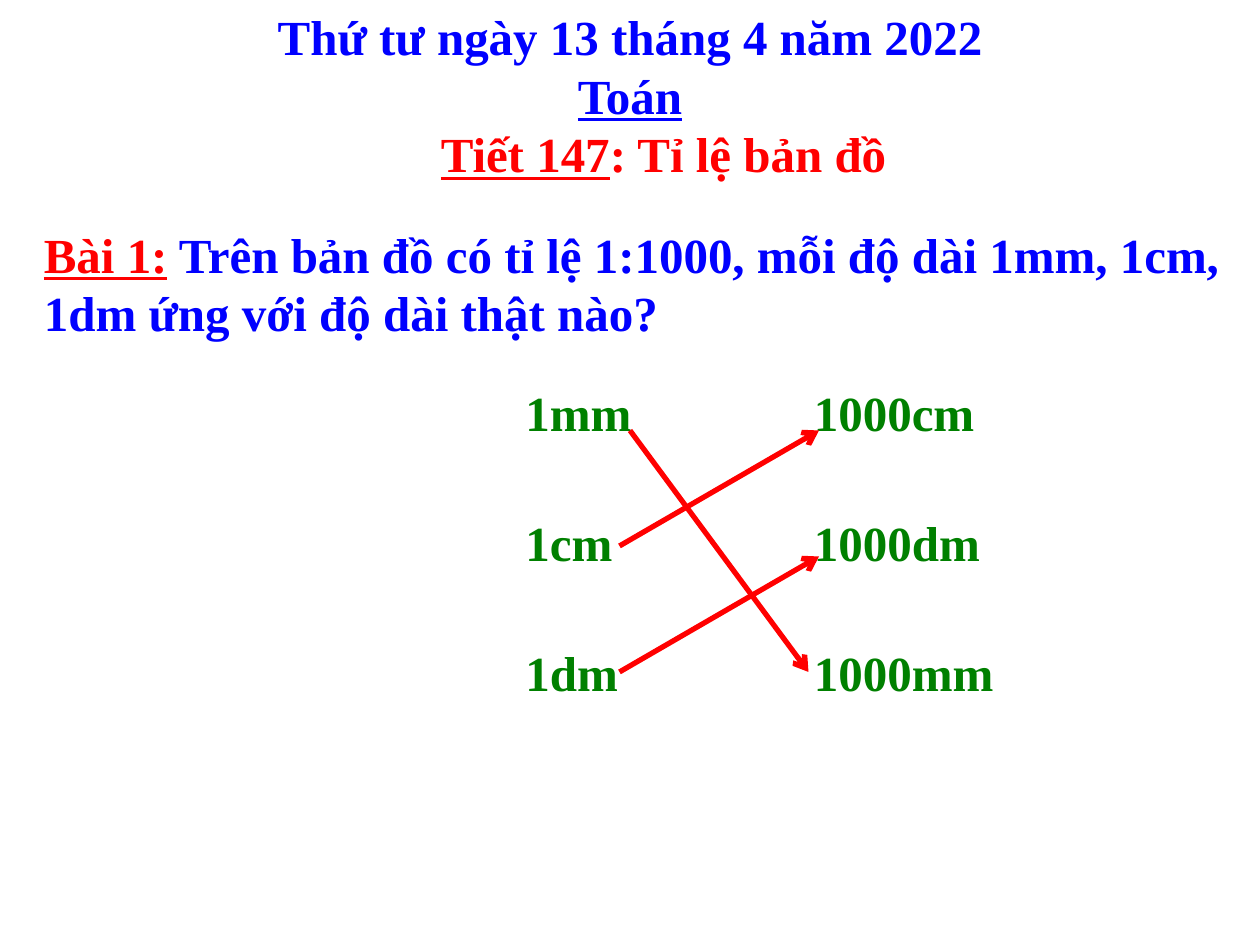
from dataclasses import dataclass

from lxml.etree import SubElement
from pptx import Presentation
from pptx.dml.color import RGBColor
from pptx.enum.shapes import MSO_CONNECTOR as Conn
from pptx.enum.text import MSO_AUTO_SIZE as Auto, PP_ALIGN as Align
from pptx.oxml.ns import qn
from pptx.util import Inches, Pt

COLORS = {"blue": "0000FF", "red": "FF0000", "green": "008000"}
FONT = "Times New Roman"
WIDTH, HEIGHT = Inches(10), Inches(7.5)
COLS, ROWS = 120, 90


@dataclass
class Run:
    text: str
    color: str
    underline: bool = False


@dataclass
class Line:
    runs: list[Run]
    align: Align = Align.LEFT
    indent: float = 0


@dataclass
class Box:
    col: float
    row: float
    cols: float
    rows: float
    lines: list[Line]


@dataclass
class Arrow:
    start: tuple[float, float]
    end: tuple[float, float]


BOXES = [
    Box(3, 20.76, 117, 12.36, [
        Line([Run("Bài 1:", "red", True),
              Run(" Trên bản đồ có tỉ lệ 1:1000, mỗi độ dài 1mm, 1cm, "
                  "1dm ứng với độ dài thật nào?", "blue")]),
    ]),
    Box(0, 0, 120, 18.12, [
        Line([Run("Thứ tư ngày 13 tháng 4 năm 2022", "blue")], Align.CENTER),
        Line([Run("Toán", "blue", True)], Align.CENTER),
        Line([Run("Tiết 147", "red", True),
              Run(": Tỉ lệ bản đồ", "red")], indent=40.8),
    ]),
]
LENGTHS = [("1mm", "1000cm"), ("1cm", "1000dm"), ("1dm", "1000mm")]
ROW_HEIGHTS = [12.36, 12.36, 6.84]
COLUMN_WIDTH = 27.48
ARROWS = [
    Arrow((60, 41), (77, 64)),
    Arrow((59, 52), (78, 41)),
    Arrow((59, 64), (78, 53)),
]


def x(cols: float) -> int:
    return round(WIDTH * cols / COLS)


def y(rows: float) -> int:
    return round(HEIGHT * rows / ROWS)


def rgb(name: str) -> RGBColor:
    return RGBColor.from_string(COLORS[name])


def write_line(p, line: Line) -> None:
    p.alignment = line.align
    p.font.name, p.font.size, p.font.bold = FONT, Pt(28), True
    if line.indent:
        p._p.get_or_add_pPr().set("marL", str(x(line.indent)))
    for run in line.runs:
        r = p.add_run()
        r.text = run.text
        r.font.name, r.font.size, r.font.bold = FONT, Pt(28), True
        r.font.color.rgb = rgb(run.color)
        r.font.underline = run.underline


def draw_box(s, box: Box) -> None:
    sp = s.shapes.add_textbox(x(box.col), y(box.row), x(box.cols), y(box.rows))
    tf = sp.text_frame
    tf.word_wrap = True
    tf.auto_size = Auto.SHAPE_TO_FIT_TEXT
    for i, line in enumerate(box.lines):
        write_line(tf.add_paragraph() if i else tf.paragraphs[0], line)


def draw_table(s, col: float, row: float) -> None:
    table = s.shapes.add_table(
        len(LENGTHS), 2, x(col), y(row),
        x(2 * COLUMN_WIDTH), y(sum(ROW_HEIGHTS))).table
    table.first_row = table.horz_banding = False
    for column in table.columns:
        column.width = x(COLUMN_WIDTH)
    for i, (texts, height) in enumerate(zip(LENGTHS, ROW_HEIGHTS)):
        table.rows[i].height = y(height)
        for j, text in enumerate(texts):
            cell = table.cell(i, j)
            cell.fill.background()
            write_line(cell.text_frame.paragraphs[0], Line([Run(text, "green")]))


def draw_arrow(s, arrow: Arrow) -> None:
    (x1, y1), (x2, y2) = arrow.start, arrow.end
    sp = s.shapes.add_connector(Conn.STRAIGHT, x(x1), y(y1), x(x2), y(y2))
    sp.line.color.rgb = rgb("red")
    sp.line.width = Pt(3)
    SubElement(sp.line._get_or_add_ln(), qn("a:tailEnd"), type="arrow")
    SubElement(sp._element.spPr, qn("a:effectLst"))


def main() -> None:
    prs = Presentation()
    prs.slide_width, prs.slide_height = WIDTH, HEIGHT
    s = prs.slides.add_slide(prs.slide_layouts[6])
    question, heading = BOXES
    draw_box(s, question)
    draw_table(s, 48.84, 36.36)
    for arrow in ARROWS:
        draw_arrow(s, arrow)
    draw_box(s, heading)
    prs.save("out.pptx")


if __name__ == "__main__":
    main()
